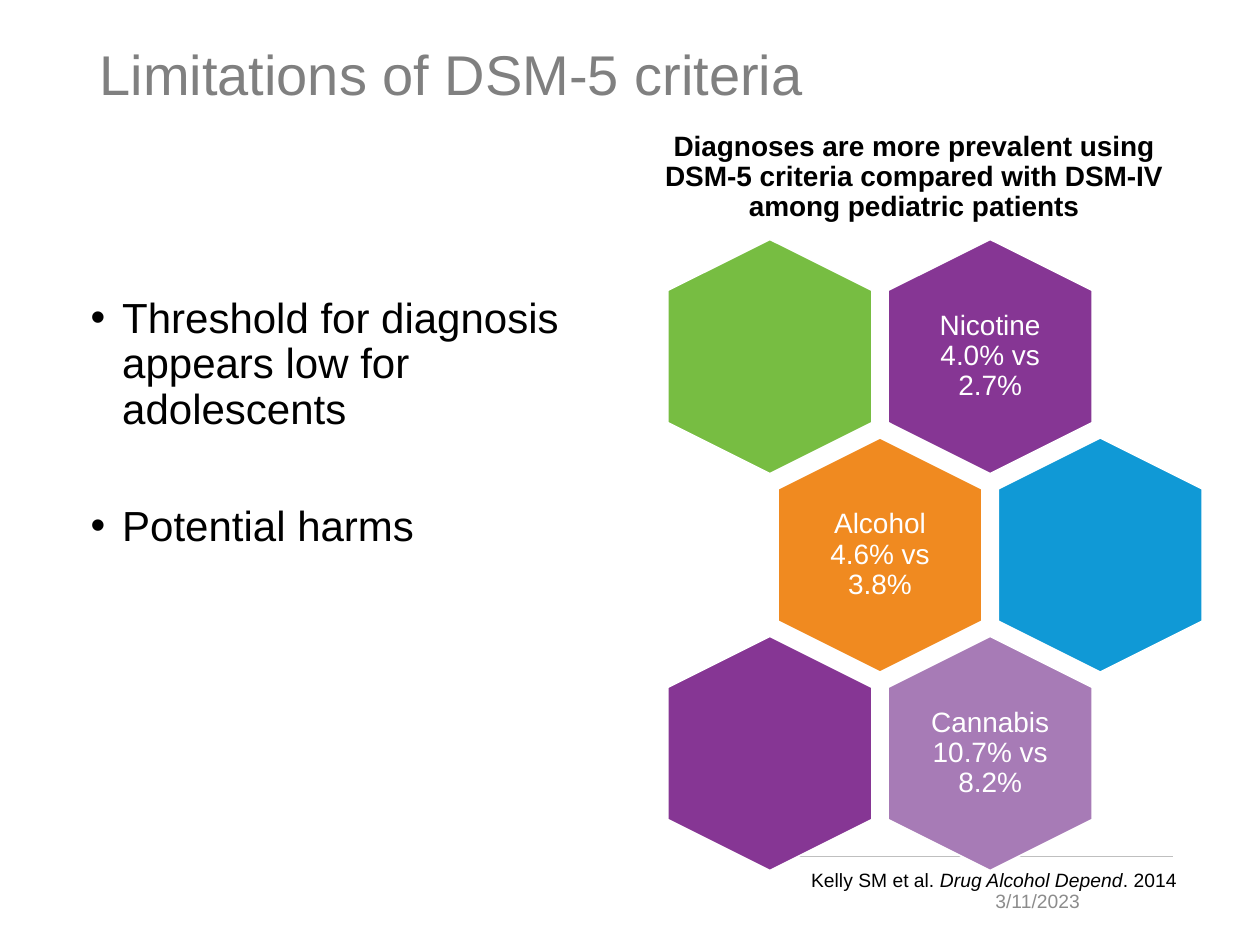
from lxml import etree
from pptx import Presentation
from pptx.dml.color import RGBColor
from pptx.enum.shapes import MSO_CONNECTOR, MSO_SHAPE
from pptx.enum.text import MSO_ANCHOR, MSO_AUTO_SIZE, PP_ALIGN
from pptx.oxml.ns import qn
from pptx.util import Inches, Pt

HEXAGON, RECT = MSO_SHAPE.HEXAGON, MSO_SHAPE.RECTANGLE
STRAIGHT = MSO_CONNECTOR.STRAIGHT
TOP, MIDDLE = MSO_ANCHOR.TOP, MSO_ANCHOR.MIDDLE
LEFT, CENTER, RIGHT = PP_ALIGN.LEFT, PP_ALIGN.CENTER, PP_ALIGN.RIGHT
rgb = RGBColor.from_string

prs = Presentation()
prs.slide_width, prs.slide_height = Inches(10), Inches(7.5)
UNIT = prs.slide_width // 100


def at(*cells):
    return [int(c * UNIT) for c in cells]


def write(sp, paras, size, color, align, anchor=TOP, spacing=0.9, **values):
    tf = sp.text_frame
    for name, value in dict(word_wrap=True, auto_size=MSO_AUTO_SIZE.NONE, vertical_anchor=anchor).items():
        setattr(tf, name, value)
    for i, runs in enumerate(paras):
        p = tf.paragraphs[0] if i == 0 else tf.add_paragraph()
        p.alignment, p.line_spacing, p.space_before = align, spacing, Pt(0)
        for j, text in enumerate(runs):
            r = p.add_run()
            r.text = text
            look = dict(name="Arial", size=Pt(size), bold=False, italic=j == 1) | values
            for name, value in look.items():
                setattr(r.font, name, value)
            r.font.color.rgb = rgb(color)


s = prs.slides.add_slide(prs.slide_layouts[3])
title, body, caption = s.placeholders
for sp, cells in (
    (title, (6.9, 0, 86.2, 12.3)),
    (body, (6.2, 23.1, 42.5, 47.6)),
    (caption, (51.3, 10, 42.5, 47.6)),
):
    sp.left, sp.top, sp.width, sp.height = at(*cells)

write(title, [["Limitations of DSM-5 criteria"]], 32, "808080", LEFT, MIDDLE)
write(body, [["Threshold for diagnosis appears low for adolescents"], ["Potential harms"]], 24, "000000", LEFT)
body.text_frame.paragraphs[1].space_before = Pt(41)
write(caption, [["Diagnoses are more prevalent using DSM-5 criteria compared with DSM-IV among pediatric patients"]],
      16, "000000", CENTER, bold=True)
for sp, indent, bullet in ((body, 2.5, "buChar"), (caption, 0, "buNone")):
    for p in sp.text_frame.paragraphs:
        pPr = p._p.get_or_add_pPr()
        pPr.set("marL", str(int(indent * UNIT)))
        pPr.set("indent", str(int(-indent * UNIT)))
        bu = etree.SubElement(pPr, qn("a:" + bullet))
        if bullet == "buChar":
            bu.set("char", "•")

rule = s.shapes.add_connector(STRAIGHT, *at(6.9, 68, 93.1, 68))
rule.line.color.rgb, rule.line.width = rgb("BFBFBF"), Pt(0.5)
etree.SubElement(rule._element.spPr, qn("a:effectLst"))

mask = s.shapes.add_shape(RECT, *at(3.3, 67, 57.8, 8))
mask.shadow.inherit = False
mask.fill.solid()
mask.fill.fore_color.rgb = mask.line.color.rgb = rgb("FFFFFF")
mask.line.width = Pt(1)

date = s.shapes.add_textbox(*at(73.4, 69.5, 13.3, 4))
write(date, [["3/11/2023"]], 11, "8C8C8C", RIGHT, MIDDLE, spacing=1)

honeycomb = s.shapes.add_group_shape().shapes
for col, row, color, label in (
    (2, 0, "863694", "Nicotine 4.0% vs 2.7%"),
    (0, 0, "77BD42", ""),
    (1, 1, "F08A20", "Alcohol 4.6% vs 3.8%"),
    (3, 1, "1099D6", ""),
    (2, 2, "A77BB6", "Cannabis 10.7% vs 8.2%"),
    (0, 2, "863694", ""),
):
    x, y = 51.8 + 8.74 * col, 20.2 + 15.75 * row
    cell = honeycomb.add_shape(HEXAGON, *at(x, y, 18.6, 16.2))
    cell.rotation = 90
    cell.shadow.inherit = False
    cell.fill.solid()
    cell.fill.fore_color.rgb = rgb(color)
    cell.line.color.rgb, cell.line.width = rgb("FFFFFF"), Pt(1)
    if label:
        tb = honeycomb.add_textbox(*at(x + 3.75, y + 1.7, 11.1, 12.8))
        for side in ("left", "top", "right", "bottom"):
            setattr(tb.text_frame, "margin_" + side, Inches(0.07))
        write(tb, [[label]], 16, "FFFFFF", CENTER, MIDDLE)

citation = s.shapes.add_textbox(*at(61.1, 68.4, 33.7, 2.9))
write(citation, [["Kelly SM et al. ", "Drug Alcohol Depend", ". 2014 "]], 11, "000000", RIGHT, spacing=1)

prs.save("out.pptx")
